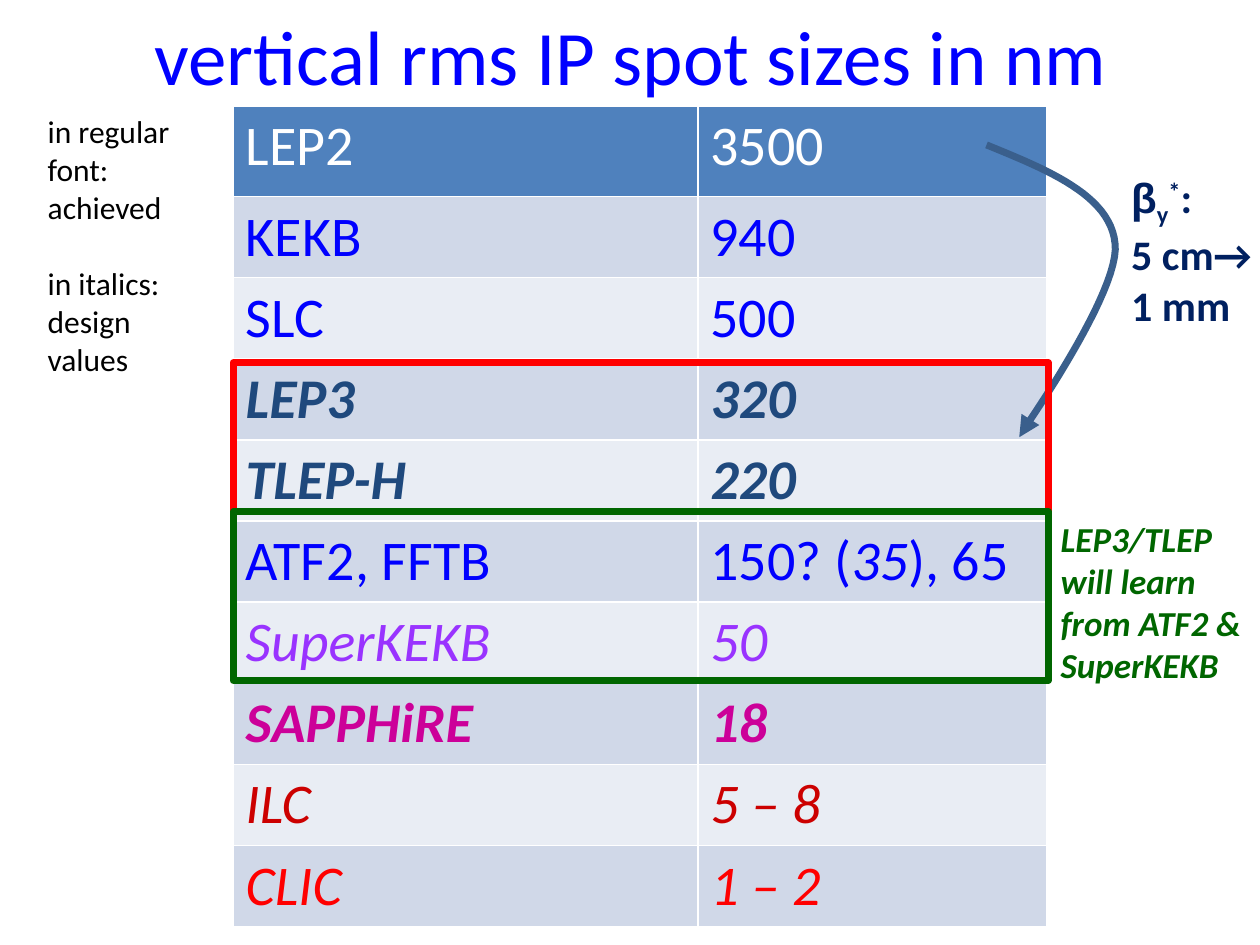
from pptx import Presentation
from pptx.dml.color import RGBColor
from pptx.enum.shapes import MSO_SHAPE as Shape
from pptx.enum.text import MSO_ANCHOR as Anchor, MSO_AUTO_SIZE as AutoSize, PP_ALIGN as Align
from pptx.oxml.ns import qn
from pptx.util import Inches, Pt
from lxml.etree import SubElement

WHITE = RGBColor(0xFF, 0xFF, 0xFF)
BLACK = RGBColor(0, 0, 0)
BLUE = RGBColor(0, 0, 0xFF)
NAVY = RGBColor(0x1F, 0x49, 0x7D)
DARK_NAVY = RGBColor(0, 0x20, 0x60)
PURPLE = RGBColor(0x99, 0x33, 0xFF)
MAGENTA = RGBColor(0xCC, 0, 0x99)
DARK_RED = RGBColor(0xCC, 0, 0)
RED = RGBColor(0xFF, 0, 0)
GREEN = RGBColor(0, 0x66, 0)
STEEL = RGBColor(0x3A, 0x5F, 0x8C)
HEADER_FILL = RGBColor(0x4F, 0x81, 0xBD)
BAND_FILLS = RGBColor(0xE9, 0xED, 0xF4), RGBColor(0xD0, 0xD8, 0xE8)

# machine, spot size as (text, italic) spans, colour, bold, italic
MACHINES = [
    ("LEP2", ["3500"], WHITE, False, False),
    ("KEKB", ["940"], BLUE, False, False),
    ("SLC", ["500"], BLUE, False, False),
    ("LEP3", ["320"], NAVY, True, True),
    ("TLEP-H", ["220"], NAVY, True, True),
    ("ATF2, FFTB", ["150? (", "35", "), 65"], BLUE, False, False),
    ("SuperKEKB", ["50"], PURPLE, False, True),
    ("SAPPHiRE", ["18"], MAGENTA, True, True),
    ("ILC", ["5 – 8"], DARK_RED, False, True),
    ("CLIC", ["1 – 2"], RED, False, True),
]


def set_font(font, size, color, bold=False, italic=False):
    font.name = "Calibri"
    font.size = Pt(size)
    font.bold = bold
    font.italic = italic
    font.color.rgb = color


def add_title(page, text, left, top, width, height):
    title = page.shapes.title
    title.left, title.top = Inches(left), Inches(top)
    title.width, title.height = Inches(width), Inches(height)
    title.text_frame.vertical_anchor = Anchor.MIDDLE
    para = title.text_frame.paragraphs[0]
    para.text = text
    para.alignment = Align.CENTER
    set_font(para.font, 44, BLUE)


def add_spot_table(page, left, top, width, height):
    table = page.shapes.add_table(len(MACHINES), 2, Inches(left), Inches(top),
                                  Inches(width), Inches(height)).table
    table.columns[0].width = Inches(3.69)
    table.columns[1].width = Inches(width - 3.69)
    for index, (machine, sizes, color, bold, italic) in enumerate(MACHINES):
        table.rows[index].height = Inches(0.57 if index else 0.72)
        for cell, texts in zip(table.rows[index].cells, ([machine], sizes)):
            cell.fill.solid()
            cell.fill.fore_color.rgb = BAND_FILLS[index % 2] if index else HEADER_FILL
            para = cell.text_frame.paragraphs[0]
            for position, text in enumerate(texts):
                span = para.add_run()
                span.text = text
                # the middle span of a mixed entry is a design value
                set_font(span.font, 32, color, bold, italic or position == 1)


def add_note(page, lines, left, top, width, height, size, color, bold=False, italic=False):
    box = page.shapes.add_textbox(Inches(left), Inches(top), Inches(width), Inches(height))
    frame = box.text_frame
    frame.word_wrap = False
    frame.auto_size = AutoSize.SHAPE_TO_FIT_TEXT
    for index, line in enumerate(lines):
        para = frame.paragraphs[0] if index == 0 else frame.add_paragraph()
        para.text = line
        set_font(para.font, size, color, bold, italic)
    return frame.paragraphs


def add_legend(page, left, top, width, height):
    lines = ["in regular", "font:", "achieved", "in italics:", "design", "values"]
    paras = add_note(page, lines, left, top, width, height, 18, BLACK)
    paras[3].space_before = Pt(22)


def add_beta_note(page, left, top, width, height):
    lines = ["", "5 cm→", "1 mm"]
    para = add_note(page, lines, left, top, width, height, 24, DARK_NAVY, bold=True)[0]
    for text, baseline in (("β", 0), ("y", -25000), ("*", 30000), (":", 0)):
        span = para.add_run()
        span.text = text
        if text == "β":
            span.font.name = "Arial"
        if baseline:
            span.font._element.set("baseline", str(baseline))


def bezier(start, first, second, end, steps=24):
    """Points along a cubic curve, without its start."""
    for step in range(1, steps + 1):
        t = step / steps
        u = 1 - t
        yield tuple(Inches(u**3 * a + 3 * u * u * t * b + 3 * u * t * t * c + t**3 * d)
                    for a, b, c, d in zip(start, first, second, end))


def add_curved_arrow(page, left, top):
    def at(x, y):
        return left + x, top + y

    start, bend, end = at(0, 0), at(1.02, 0.78), at(0.3, 2.25)
    tip = at(0.26, 2.32)
    points = [*bezier(start, at(0.49, 0.2), at(0.98, 0.4), bend),
              *bezier(bend, at(1.07, 1.15), end, end),
              (Inches(tip[0]), Inches(tip[1]))]
    builder = page.shapes.build_freeform(Inches(left), Inches(top))
    builder.add_line_segments(points, close=False)
    arrow = builder.convert_to_shape()
    arrow.shadow.inherit = False
    arrow.fill.background()
    arrow.line.color.rgb = STEEL
    arrow.line.width = Pt(4)
    SubElement(arrow.line._get_or_add_ln(), qn("a:tailEnd"), type="triangle")


def add_frame(page, left, top, width, height, color):
    frame = page.shapes.add_shape(Shape.RECTANGLE, Inches(left), Inches(top),
                                  Inches(width), Inches(height))
    frame.shadow.inherit = False
    frame.fill.background()
    frame.line.color.rgb = color
    frame.line.width = Pt(4)


def main():
    deck = Presentation()
    deck.slide_width, deck.slide_height = Inches(10), Inches(7.5)
    page = deck.slides.add_slide(deck.slide_layouts[5])
    add_title(page, "vertical rms IP spot sizes in nm", 0.51, -0.19, 9, 1.25)
    add_spot_table(page, 1.85, 0.84, 6.46, 5.85)
    add_legend(page, 0.28, 0.84, 1.18, 2.22)
    lessons = ["LEP3/TLEP", "will learn", "from ATF2 &", "SuperKEKB"]
    add_note(page, lessons, 8.32, 4.06, 1.64, 1.45, 20, GREEN, bold=True, italic=True)
    add_curved_arrow(page, 7.83, 1.15)
    add_beta_note(page, 8.88, 1.31, 1.17, 1.31)
    add_frame(page, 1.85, 2.88, 6.47, 1.18, RED)
    add_frame(page, 1.85, 4.06, 6.47, 1.34, GREEN)
    deck.save("out.pptx")


if __name__ == "__main__":
    main()
